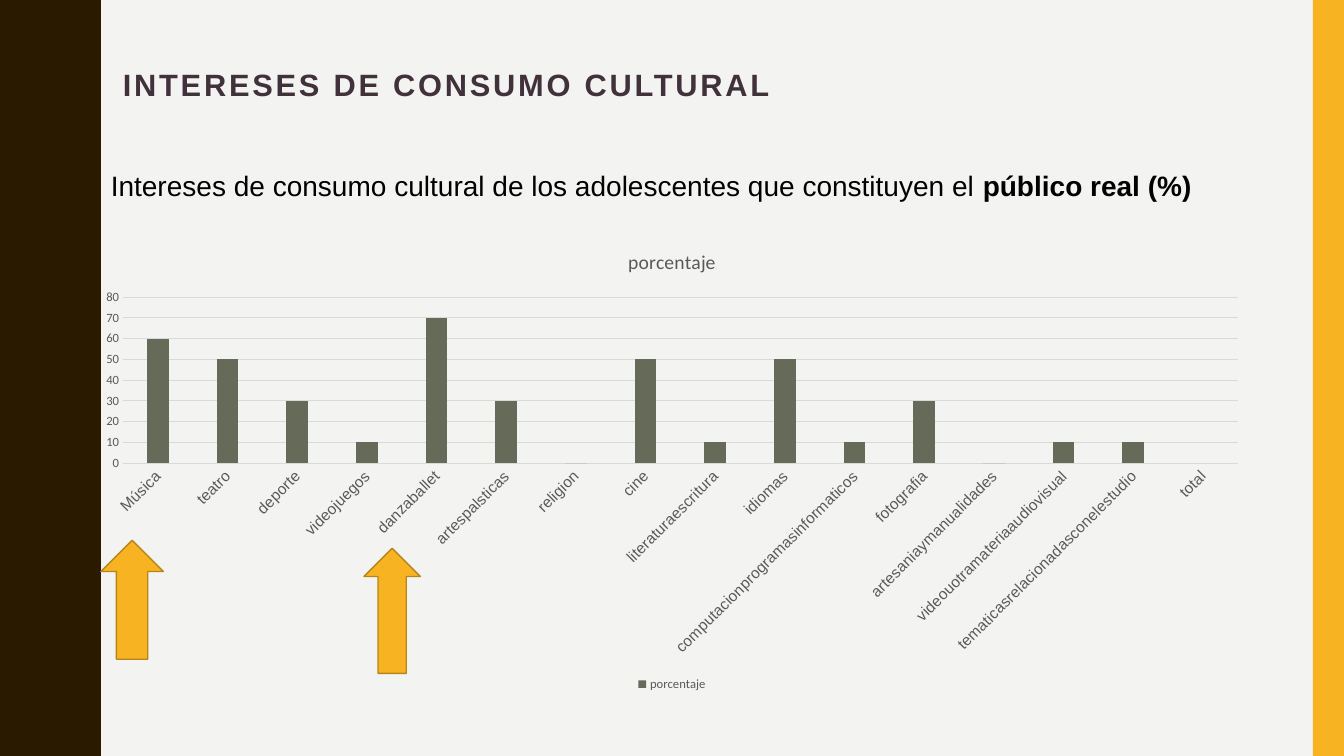
from lxml import etree
from pptx import Presentation
from pptx.chart.data import CategoryChartData
from pptx.dml.color import RGBColor
from pptx.enum import chart as charts, shapes, text
from pptx.oxml.ns import qn
from pptx.util import Inches, Pt

# Content
HEADING = "INTERESES DE CONSUMO CULTURAL"
SUBTITLE = [
    ("Intereses de consumo cultural de los adolescentes que constituyen el ", False),
    ("público real (%)", True),
]
SERIES = "porcentaje"
INTERESTS = {
    "Música": 60, "teatro": 50, "deporte": 30, "videojuegos": 10,
    "danzaballet": 70, "artespalsticas": 30, "religion": 0, "cine": 50,
    "literaturaescritura": 10, "idiomas": 50,
    "computacionprogramasinformaticos": 10, "fotografia": 30,
    "artesaniaymanualidades": 0, "videouotramateriaaudiovisual": 10,
    "tematicasrelacionadasconelestudio": 10, "total": None,
}
ARROWS = [(3.61, 5.44, 0.56, 1.24), (1, 5.36, 0.62, 1.18)]

# Half of one wave, from trough to crest
WAVE_PERIOD, WAVE_COUNT = 1.5, 5
HALF_WAVE = [
    (0.78, 0), (0.78, 0.07), (0.79, 0.14), (0.8, 0.2), (0.81, 0.25),
    (0.83, 0.29), (0.85, 0.33), (0.87, 0.38), (0.89, 0.42), (0.91, 0.46),
    (0.93, 0.5), (0.95, 0.55), (0.96, 0.61), (0.97, 0.68), (0.97, 0.75),
]

THEME = {
    "background": "F3F3F2", "wave": "2A1A00", "accent": "F8B323",
    "accent_line": "B7841A", "heading": "41313B", "body": "000000",
    "bar": "656A59", "muted": "595959", "grid": "D9D9D9",
    "text_font": "Arial", "chart_font": "Calibri",
    "heading_size": 22, "body_size": 20, "chart_title_size": 14,
    "category_size": 11, "small_size": 9,
}


def color(name):
    return RGBColor.from_string(THEME[name])


def style(font, face, size, tone, bold=False):
    font.name = THEME[face]
    font.size = Pt(THEME[size])
    font.color.rgb = color(tone)
    font.bold = bold


def paint(shape, fill, line=None):
    shape.shadow.inherit = False
    shape.fill.solid()
    shape.fill.fore_color.rgb = color(fill)
    if line:
        shape.line.color.rgb = color(line)
        shape.line.width = Pt(1)
    else:
        shape.line.fill.background()


def add_text(slide, box, runs, size, tone):
    frame = slide.shapes.add_textbox(*map(Inches, box)).text_frame
    frame.word_wrap = True
    frame.vertical_anchor = text.MSO_ANCHOR.TOP
    for words, bold in runs:
        run = frame.paragraphs[0].add_run()
        run.text = words
        style(run.font, "text_font", size, tone, bold)
    return frame.paragraphs[0]


def add_side_bands(slide):
    full_wave = HALF_WAVE + [(x, WAVE_PERIOD - y) for x, y in HALF_WAVE[-2::-1]]
    edge = [(x, y + n * WAVE_PERIOD) for n in range(WAVE_COUNT) for x, y in full_wave]
    outline = slide.shapes.build_freeform(0, 0, scale=Inches(1))
    outline.add_line_segments(edge + [(0, 7.5)], close=True)
    paint(outline.convert_to_shape(), "wave")
    band = slide.shapes.add_shape(
        shapes.MSO_SHAPE.RECTANGLE, *map(Inches, (13.02, 0, 0.31, 7.5)))
    paint(band, "accent")


def add_interest_chart(slide):
    data = CategoryChartData()
    data.categories = list(INTERESTS)
    data.add_series(SERIES, list(INTERESTS.values()))
    chart = slide.shapes.add_chart(
        charts.XL_CHART_TYPE.COLUMN_CLUSTERED,
        *map(Inches, (0.82, 2.28, 11.69, 4.62)), data).chart

    # Title and legend
    chart.has_title = True
    chart.chart_title.text_frame.text = SERIES
    title_run = chart.chart_title.text_frame.paragraphs[0].runs[0]
    style(title_run.font, "chart_font", "chart_title_size", "muted")
    chart.has_legend = True
    chart.legend.position = charts.XL_LEGEND_POSITION.BOTTOM
    chart.legend.include_in_layout = False
    style(chart.legend.font, "chart_font", "small_size", "muted")

    # Bars
    plot = chart.plots[0]
    plot.gap_width, plot.overlap = 219, -27
    plot.vary_by_categories = False
    bars = plot.series[0].format.fill
    bars.solid()
    bars.fore_color.rgb = color("bar")

    # Axes
    categories, values = chart.category_axis, chart.value_axis
    for axis in (categories, values):
        axis.major_tick_mark = axis.minor_tick_mark = charts.XL_TICK_MARK.NONE
    style(categories.tick_labels.font, "text_font", "category_size", "muted")
    style(values.tick_labels.font, "chart_font", "small_size", "muted")
    label_body = categories._element.find(qn("c:txPr")).find(qn("a:bodyPr"))
    label_body.set("rot", "-2700000")
    label_body.set("vert", "horz")
    values.minimum_scale, values.maximum_scale, values.major_unit = 0, 80, 10
    values.format.line.fill.background()
    for line in (categories.format.line, values.major_gridlines.format.line):
        line.color.rgb = color("grid")
        line.width = Pt(0.75)


def main():
    deck = Presentation()
    deck.slide_width, deck.slide_height = Inches(13.33), Inches(7.5)
    slide = deck.slides.add_slide(deck.slide_layouts[6])
    slide.background.fill.solid()
    slide.background.fill.fore_color.rgb = color("background")

    add_side_bands(slide)

    # Heading with wide letter spacing
    heading = add_text(slide, (1.12, 0.64, 10.63, 0.98), [(HEADING, True)],
                       "heading_size", "heading")
    heading.line_spacing = 0.9
    heading.runs[0].font._element.set("spc", "200")

    add_interest_chart(slide)
    add_text(slide, (1, 1.62, 11.51, 0.44), SUBTITLE, "body_size", "body")

    # Arrows pointing at the leading interests
    for box in ARROWS:
        arrow = slide.shapes.add_shape(shapes.MSO_SHAPE.UP_ARROW, *map(Inches, box))
        paint(arrow, "accent", "accent_line")

    deck.save("out.pptx")


if __name__ == "__main__":
    main()
